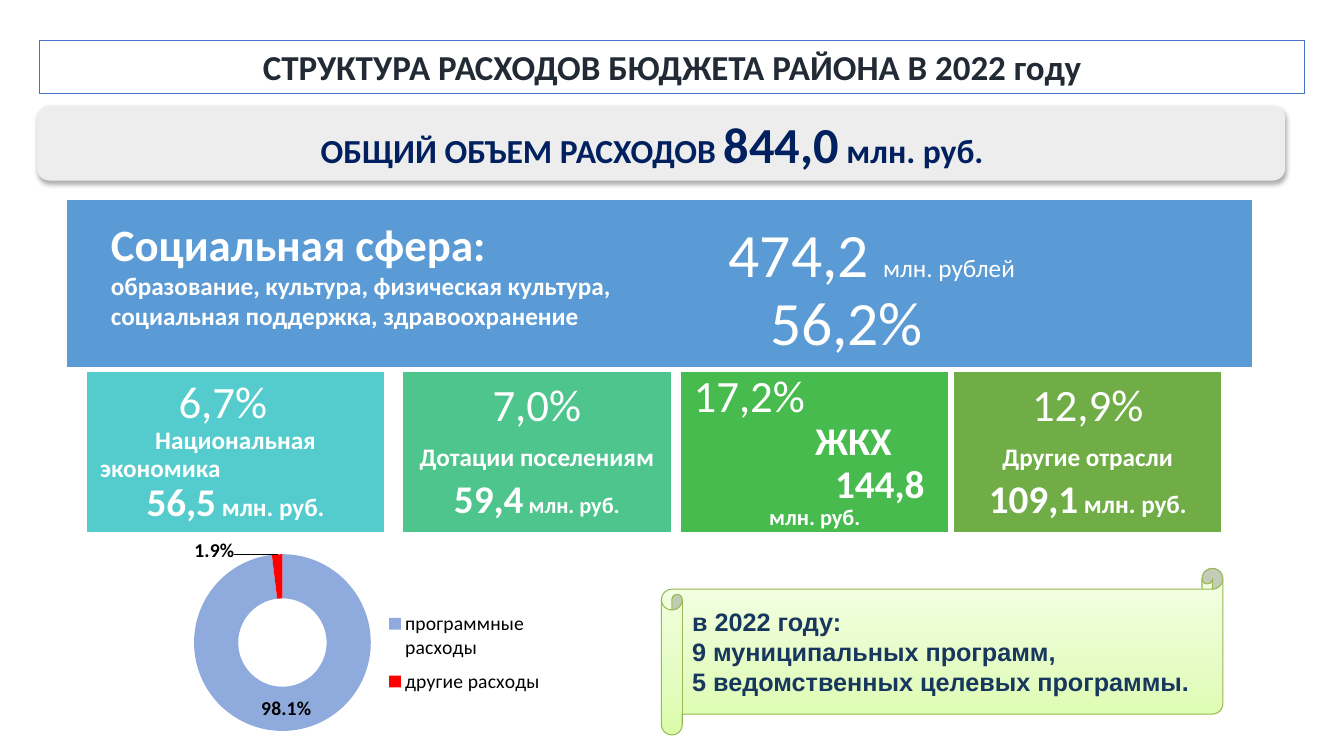
"""Build the slide on the structure of district budget spending."""
from lxml import etree
from pptx import Presentation
from pptx.chart.data import CategoryChartData
from pptx.dml.color import RGBColor
from pptx.enum.chart import XL_CHART_TYPE, XL_LEGEND_POSITION
from pptx.enum.shapes import MSO_SHAPE
from pptx.enum.text import MSO_ANCHOR, MSO_AUTO_SIZE, PP_ALIGN
from pptx.oxml import parse_xml
from pptx.oxml.ns import qn
from pptx.util import Pt

RECT, ROUND, SCROLL = MSO_SHAPE.RECTANGLE, MSO_SHAPE.ROUNDED_RECTANGLE, MSO_SHAPE.HORIZONTAL_SCROLL
LEFT, MID = PP_ALIGN.LEFT, PP_ALIGN.CENTER
TOP, CENTER = MSO_ANCHOR.TOP, MSO_ANCHOR.MIDDLE
FIXED = MSO_AUTO_SIZE.NONE
RING, RIGHT = XL_CHART_TYPE.DOUGHNUT, XL_LEGEND_POSITION.RIGHT

WHITE = RGBColor(0xFF, 0xFF, 0xFF)
BLACK = RGBColor(0x00, 0x00, 0x00)
INK = RGBColor(0x22, 0x2A, 0x35)
NAVY = RGBColor(0x00, 0x20, 0x60)
DEEP = RGBColor(0x17, 0x37, 0x5E)
FRAME = RGBColor(0x44, 0x72, 0xC4)
GREY = RGBColor(0xED, 0xED, 0xED)
BLUE = RGBColor(0x5B, 0x9B, 0xD5)
TEAL = RGBColor(0x54, 0xCC, 0xCD)
MINT = RGBColor(0x4D, 0xC5, 0x8D)
GREEN = RGBColor(0x48, 0xBB, 0x4F)
OLIVE = RGBColor(0x70, 0xAD, 0x47)
EDGE = RGBColor(0x98, 0xB9, 0x55)
PALE = RGBColor(0x8F, 0xAA, 0xDC)
RED = RGBColor(0xFF, 0x00, 0x00)
FADE = [(0, RGBColor(0xDA, 0xFD, 0xA7)), (35, RGBColor(0xE4, 0xFC, 0xC2)),
        (100, RGBColor(0xF5, 0xFF, 0xE7))]

A_NS = 'xmlns:a="http://schemas.openxmlformats.org/drawingml/2006/main"'
SHADOW = (f'<a:effectLst {A_NS}><a:outerShdw blurRad="44450" dist="27940" dir="5400000">'
          '<a:srgbClr val="000000"><a:alpha val="32000"/></a:srgbClr>'
          '</a:outerShdw></a:effectLst>')

CARDS = [
    (62, 212.5, TEAL, 0, [
        (LEFT, 56, [("6,7%", 32, False)]),
        (MID, 0, [("Национальная", 18, True)]),
        (LEFT, 0, [("экономика", 18, True)]),
        (MID, 0, [("56,5", 28, True), (" млн. руб.", 18, True)])]),
    (287.5, 192, MINT, 0.3, [
        (MID, 0, [("7,0%", 32, False)]),
        (MID, 0, [("Дотации поселениям", 18, True)]),
        (MID, 0, [("59,4", 28, True), (" млн. руб.", 16, True)])]),
    (486, 192, GREEN, 0, [
        (LEFT, 0, [("17,2%", 32, False)]),
        (LEFT, 87, [("ЖКХ", 28, True)]),
        (LEFT, 101, [("144,8", 28, True)]),
        (MID, 0, [("млн. руб.", 16, True)])]),
    (681, 192, OLIVE, 0.3, [
        (MID, 0, [("12,9%", 32, False)]),
        (MID, 0, [("Другие отрасли", 18, True)]),
        (MID, 0, [("109,1", 28, True), (" млн. руб.", 18, True)])]),
]


def put(item, values):
    """Set every named value on an item."""
    for key, value in values.items():
        setattr(item, key, value)


def place(shape, box):
    """Move and size a shape by a box in points."""
    put(shape, dict(zip(("left", "top", "width", "height"), map(Pt, box))))


def write(shape, lines, color, face="Calibri", gap=0, space=1, **frame):
    """Fill a shape with lines of (alignment, indent, runs)."""
    text = shape.text_frame
    put(text, {"word_wrap": True, "auto_size": FIXED, "vertical_anchor": CENTER, **frame})
    for n, (align, indent, runs) in enumerate(lines):
        par = text.add_paragraph() if n else text.paragraphs[0]
        after = Pt(round(gap * runs[0][1]))
        put(par, {"alignment": align, "line_spacing": space,
                  "space_before": Pt(0), "space_after": after})
        props = par._p.get_or_add_pPr()
        put_xml = {"marL": str(Pt(indent)), "indent": "0"}
        props.attrib.update(put_xml)
        etree.SubElement(props, qn("a:buNone"))
        for words, size, bold in runs:
            run = par.add_run()
            run.text = words
            put(run.font, {"name": face, "size": Pt(size), "bold": bold})
            run.font.color.rgb = color


def panel(slide, kind, box, fill=None, line=None, width=1):
    """Add a preset shape with a plain fill and line."""
    shape = slide.shapes.add_shape(kind, *map(Pt, box))
    shape.shadow.inherit = False
    if fill is not None:
        shape.fill.solid()
        shape.fill.fore_color.rgb = fill
    if line is None:
        shape.line.fill.background()
    else:
        shape.line.color.rgb = line
        shape.line.width = Pt(width)
    return shape


def shade(shape):
    """Give a shape a soft shadow below it."""
    props = shape._element.spPr
    props.remove(props.find(qn("a:effectLst")))
    props.append(parse_xml(SHADOW))


def blend(shape):
    """Fill a shape with the gradient rising from its foot."""
    shape.fill.gradient()
    shape.fill.gradient_angle = 90
    stops = shape._element.spPr.find(qn("a:gradFill")).find(qn("a:gsLst"))
    for stop in list(stops):
        stops.remove(stop)
    for spot, color in FADE:
        stop = etree.SubElement(stops, qn("a:gs"), pos=str(spot * 1000))
        etree.SubElement(stop, qn("a:srgbClr"), val=str(color))


def lay(node, index, **values):
    """Give a chart part a manual layout."""
    for old in node.findall(qn("c:layout")):
        node.remove(old)
    layout = etree.Element(qn("c:layout"))
    manual = etree.SubElement(layout, qn("c:manualLayout"))
    for key, value in values.items():
        etree.SubElement(manual, qn("c:" + key), val=str(value))
    node.insert(index, layout)


def ring(slide):
    """Add the doughnut of programme and other spending."""
    data = CategoryChartData(number_format="0.0%")
    data.categories = ["программные расходы", "другие расходы"]
    data.add_series("Series 1", (0.981, 0.019))
    box = map(Pt, (104.5, 383, 286, 143.5))
    chart = slide.shapes.add_chart(RING, *box, data).chart
    put(chart, {"has_title": False, "has_legend": True})
    put(chart.font, {"name": "Calibri", "size": Pt(18)})
    chart.font.color.rgb = BLACK
    put(chart.legend, {"position": RIGHT, "include_in_layout": False})
    chart.legend.font.size = Pt(14)
    plot = chart.plots[0]
    plot.vary_by_categories = True
    series = plot.series[0]
    labels = series.data_labels
    put(labels, {"show_value": True, "number_format": "0.0%",
                 "number_format_is_linked": False})
    small = series.points[1].data_label
    for font in (labels.font, small.font):
        put(font, {"name": "Calibri", "size": Pt(14), "bold": True})
        font.color.rgb = BLACK
    for n, color in enumerate((PALE, RED)):
        fill = series.points[n].format.fill
        fill.solid()
        fill.fore_color.rgb = color
    root = chart._chartSpace
    lay(root.xpath(".//c:plotArea")[0], 0, layoutTarget="inner", xMode="edge",
        yMode="edge", x=0.08, y=0.09, w=0.52, h=0.88)
    lay(root.xpath(".//c:legend")[0], 1, xMode="edge", yMode="edge",
        x=0.59, y=0.33, w=0.41, h=0.5)
    lay(root.xpath(".//c:dLbl")[0], 1, x=-0.16, y=-0.13)


def main():
    """Draw the slide and save it."""
    deck = Presentation()
    put(deck, {"slide_width": Pt(960), "slide_height": Pt(540)})
    slide = deck.slides.add_slide(deck.slide_layouts[1])

    title = slide.shapes.title
    place(title, (28, 29, 904, 37.5))
    title.line.color.rgb = FRAME
    title.line.width = Pt(0.75)
    write(title, [(MID, 0, [("СТРУКТУРА РАСХОДОВ БЮДЖЕТА РАЙОНА В 2022 году", 25, True)])], INK)

    total = panel(slide, ROUND, (26.5, 75.5, 891.5, 53.5), GREY)
    shade(total)
    write(total, [(MID, 0, [("ОБЩИЙ ОБЪЕМ РАСХОДОВ ", 24, True), ("844,0", 36, True),
                            (" млн. руб.", 24, True)])], NAVY, margin_right=Pt(20))
    ring(slide)

    panel(slide, RECT, (47.5, 142.5, 847.5, 120), BLUE, WHITE)
    for left, width, fill, gap, lines in CARDS:
        card = panel(slide, RECT, (left, 265.5, width, 115), fill, WHITE)
        sides = ("left", "top", "right", "bottom")
        write(card, lines, WHITE, gap=gap, space=0.9,
              **{"margin_" + side: Pt(9.5) for side in sides})

    scroll = panel(slide, SCROLL, (472.5, 406, 401, 119), line=EDGE, width=0.75)
    blend(scroll)
    notes = ("в 2022 году:", "9 муниципальных программ,", "5 ведомственных целевых программы.")
    write(scroll, [(LEFT, 0, [(note, 18, True)]) for note in notes], DEEP, "Arial")

    social = slide.placeholders[1]
    place(social, (72, 151, 400, 105))
    write(social, [(LEFT, 0, [("Социальная сфера:", 32, True)]),
                   (LEFT, 0, [("образование, культура, физическая культура,", 18, True)]),
                   (LEFT, 0, [("социальная поддержка, здравоохранение", 18, True)])],
          WHITE, vertical_anchor=TOP)
    slide.shapes._spTree.append(social._element)

    for box, runs in (((543, 199.5, 124.5, 60.5), [("56,2%", 44, False)]),
                      ((513.5, 151, 221, 60.5), [("474,2 ", 44, False),
                                                 ("млн. рублей", 18, False)])):
        value = slide.shapes.add_textbox(*map(Pt, box))
        write(value, [(LEFT, 0, runs)], WHITE, vertical_anchor=TOP, word_wrap=False)
    deck.save("out.pptx")


if __name__ == "__main__":
    main()
